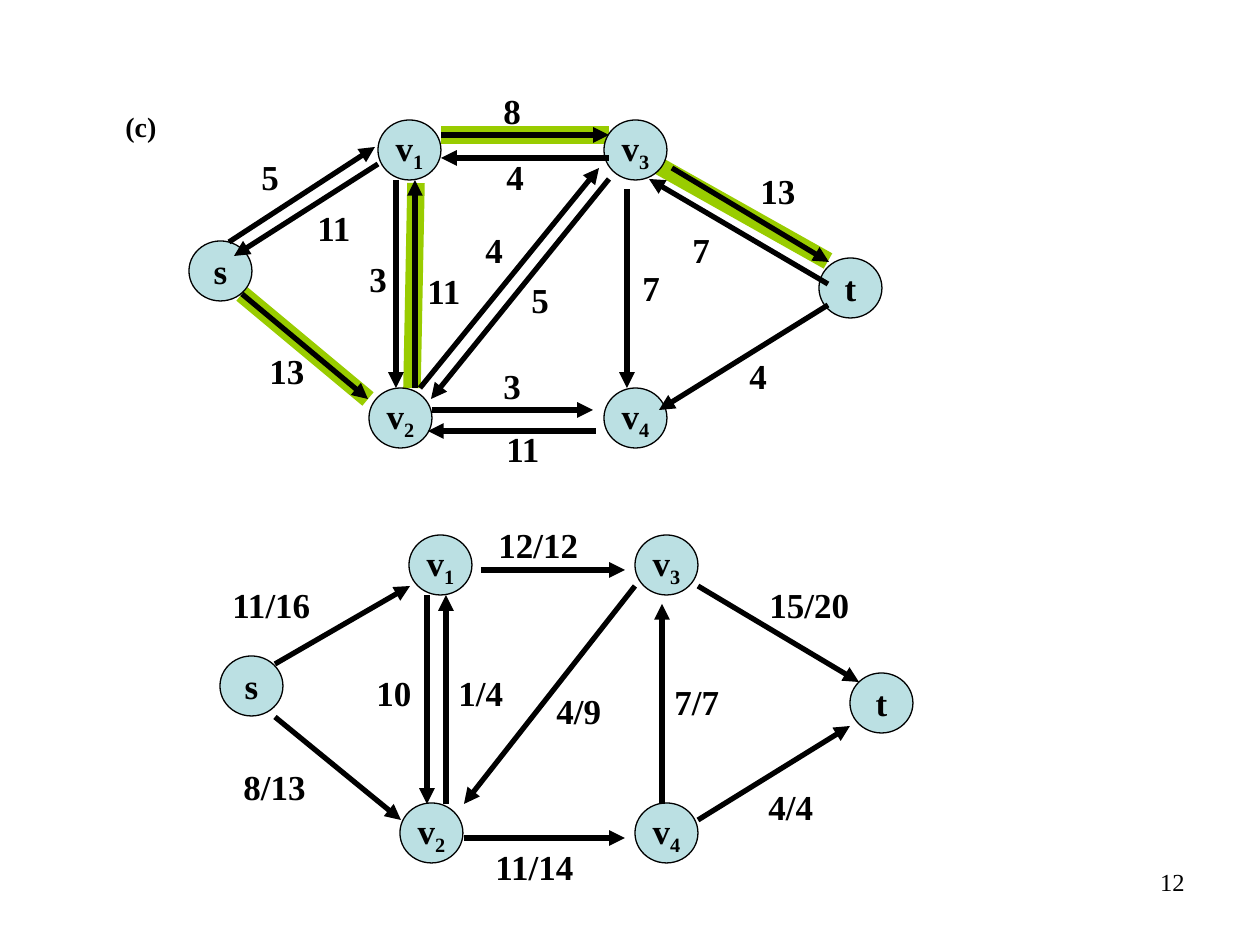
import dataclasses

import pptx
import pptx.dml.color
import pptx.enum.shapes
import pptx.enum.text
import pptx.oxml.ns
import pptx.util
from lxml import etree

PX = 914400 / 126
FONT = "Times New Roman"
COLORS = {"ink": "000000", "node": "BBE0E3", "path": "99CC00"}
NODE_W, NODE_H = 63, 60
LABEL_H = 54
FLOW_DX, FLOW_DY = 31, 415  # the flow network repeats the node layout lower down

ALIGN = pptx.enum.text.PP_ALIGN
ANCHOR = pptx.enum.text.MSO_ANCHOR


@dataclasses.dataclass
class Node:
    name: str
    x: int
    y: int
    sub: str = ""


@dataclasses.dataclass
class Edge:
    x1: int
    y1: int
    x2: int
    y2: int


@dataclasses.dataclass
class Label:
    text: str
    x: int
    y: int


NODES = [
    Node("s", 189, 241), Node("v", 604, 388, "4"), Node("v", 369, 388, "2"),
    Node("v", 604, 120, "3"), Node("v", 378, 120, "1"), Node("t", 819, 258),
]

# Augmenting path s, v2, v1, v3, t
PATH = [
    Edge(659, 166, 828, 261), Edge(441, 135, 609, 135),
    Edge(416, 183, 412, 388), Edge(242, 294, 368, 399),
]

RESIDUAL_EDGES = [
    Edge(229, 242, 375, 147), Edge(378, 164, 234, 256),
    Edge(396, 180, 396, 388), Edge(415, 388, 415, 180),
    Edge(609, 179, 431, 399), Edge(420, 388, 599, 168),
    Edge(441, 135, 609, 135), Edge(609, 158, 441, 158),
    Edge(627, 189, 627, 388), Edge(242, 294, 368, 399),
    Edge(432, 410, 593, 410), Edge(596, 431, 428, 431),
    Edge(828, 305, 659, 410), Edge(672, 168, 829, 262),
    Edge(828, 284, 649, 179),
]
RESIDUAL_LABELS = [
    Label("5", 249, 149), Label("11", 305, 200), Label("13", 257, 343),
    Label("3", 357, 251), Label("11", 415, 263), Label("4", 473, 222),
    Label("5", 519, 272), Label("8", 491, 83), Label("4", 494, 149),
    Label("7", 630, 260), Label("7", 680, 222), Label("13", 748, 163),
    Label("4", 737, 348), Label("3", 491, 358), Label("11", 494, 421),
]

FLOW_EDGES = [
    Edge(275, 664, 410, 586), Edge(275, 717, 401, 820),
    Edge(427, 595, 427, 804), Edge(446, 804, 446, 595),
    Edge(635, 586, 464, 804), Edge(481, 570, 625, 570),
    Edge(662, 804, 662, 604), Edge(464, 838, 625, 838),
    Edge(698, 820, 850, 726), Edge(698, 586, 859, 682),
]
FLOW_LABELS = [
    Label("11/16", 220, 577), Label("8/13", 231, 759), Label("10", 364, 665),
    Label("1/4", 446, 665), Label("4/9", 544, 683), Label("7/7", 662, 674),
    Label("11/14", 483, 839), Label("4/4", 756, 779), Label("15/20", 757, 577),
    Label("12/12", 486, 517),
]


def emu(px: int) -> int:
    return round(px * PX)


def rgb(name: str) -> pptx.dml.color.RGBColor:
    return pptx.dml.color.RGBColor.from_string(COLORS[name])


def write(sp, text: str, *, sub="", size=20, bold=True, align=ALIGN.LEFT,
          anchor=ANCHOR.TOP, wrap=False) -> None:
    tf = sp.text_frame
    tf.word_wrap = wrap
    tf.vertical_anchor = anchor
    p = tf.paragraphs[0]
    p.alignment = align
    for part in filter(None, (text, sub)):
        r = p.add_run()
        r.text = part
        r.font.name = FONT
        r.font.size = pptx.util.Pt(size)
        r.font.bold = bold
        r.font.color.rgb = rgb("ink")
    if sub:
        r.font._element.set("baseline", "-25000")


def add_text(s, text: str, x: int, y: int, w: int, h: int, **fmt) -> None:
    write(s.shapes.add_textbox(*map(emu, (x, y, w, h))), text, **fmt)


def add_label(s, label: Label) -> None:
    slashes = label.text.count("/")
    digits = len(label.text) - slashes
    width = round(25 + 17.5 * digits + 10 * slashes)
    add_text(s, label.text, label.x, label.y, width, LABEL_H)


def add_node(s, node: Node, dx: int, dy: int) -> None:
    sp = s.shapes.add_shape(
        pptx.enum.shapes.MSO_SHAPE.OVAL,
        *map(emu, (node.x + dx, node.y + dy, NODE_W, NODE_H)))
    sp.shadow.inherit = False
    sp.fill.solid()
    sp.fill.fore_color.rgb = rgb("node")
    sp.line.color.rgb = rgb("ink")
    sp.line.width = pptx.util.Pt(0.75)
    write(sp, node.name, sub=node.sub, align=ALIGN.CENTER, anchor=ANCHOR.MIDDLE)


def add_edge(s, edge: Edge, color="ink", width=3, arrow=True) -> None:
    cx = s.shapes.add_connector(
        pptx.enum.shapes.MSO_CONNECTOR.STRAIGHT,
        *map(emu, (edge.x1, edge.y1, edge.x2, edge.y2)))
    cx.line.color.rgb = rgb(color)
    cx.line.width = pptx.util.Pt(width)
    sp_pr = cx._element.spPr
    qn = pptx.oxml.ns.qn
    if arrow:
        etree.SubElement(sp_pr.find(qn("a:ln")), qn("a:tailEnd"), type="triangle")
    etree.SubElement(sp_pr, qn("a:effectLst"))


def add_network(s, edges: list[Edge], labels: list[Label], dx=0, dy=0) -> None:
    for node in NODES:
        add_node(s, node, dx, dy)
    for edge in edges:
        add_edge(s, edge)
    for label in labels:
        add_label(s, label)


def main() -> None:
    prs = pptx.Presentation()
    prs.slide_width, prs.slide_height = emu(1260), emu(945)
    s = prs.slides.add_slide(prs.slide_layouts[6])

    # Page number and part letter
    add_text(s, "12", 903, 861, 294, 66, size=14, bold=False,
             align=ALIGN.RIGHT, wrap=True)
    add_text(s, "(c)", 113, 103, 57, 47, size=16)

    # Augmenting path behind the residual network
    for edge in PATH:
        add_edge(s, edge, color="path", width=10, arrow=False)

    # Residual network above, flow network below
    add_network(s, RESIDUAL_EDGES, RESIDUAL_LABELS)
    add_network(s, FLOW_EDGES, FLOW_LABELS, FLOW_DX, FLOW_DY)

    prs.save("out.pptx")


if __name__ == "__main__":
    main()
